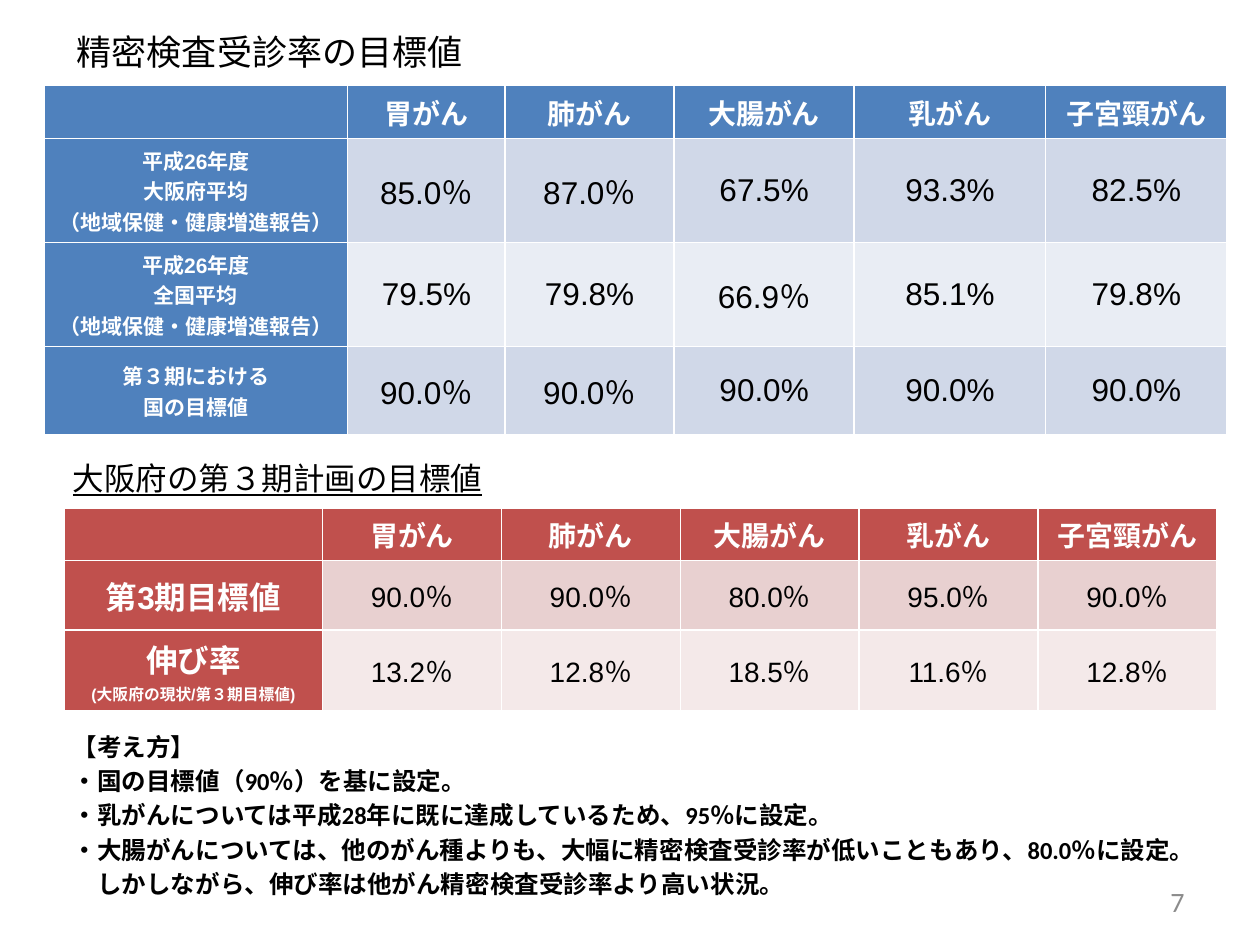
import pptx
import pptx.dml.color
import pptx.enum.text
import pptx.oxml
import pptx.oxml.ns
import pptx.util

RGB = pptx.dml.color.RGBColor
BLACK = RGB(0, 0, 0)
WHITE = RGB(255, 255, 255)
GRAY = RGB(0x8C, 0x8C, 0x8C)
BLUE = RGB(0x4F, 0x81, 0xBD)
BLUE_BANDS = [RGB(0xD0, 0xD8, 0xE8), RGB(0xE9, 0xED, 0xF4)]
RED = RGB(0xC0, 0x50, 0x4D)
RED_BANDS = [RGB(0xE8, 0xD0, 0xD0), RGB(0xF4, 0xE9, 0xE9)]
CJK = "Noto Sans CJK JP"
ALIGN = pptx.enum.text.PP_ALIGN
ANCHOR = pptx.enum.text.MSO_ANCHOR

prs = pptx.Presentation()
prs.slide_width = pptx.util.Inches(10)
prs.slide_height = pptx.util.Inches(7.5)
s = prs.slides.add_slide(prs.slide_layouts[5])


def box(left, top, width, height):
    x, y = prs.slide_width / 100, prs.slide_height / 100
    return [round(v) for v in (left * x, top * y, width * x, height * y)]


def style(p, size, font, color, bold=False, align=ALIGN.LEFT):
    p.alignment = align
    for r in p.runs:
        r.font.size = pptx.util.Pt(size)
        r.font.name = font
        r.font.bold = bold
        r.font.color.rgb = color
        ea = pptx.oxml.parse_xml(
            f'<a:ea {pptx.oxml.ns.nsdecls("a")} typeface="{CJK}"/>')
        r.font._element.find(pptx.oxml.ns.qn("a:latin")).addnext(ea)


title = s.shapes.title
title.left, title.top, title.width, title.height = box(5.1, 0.67, 90, 9.47)
title.text_frame.text = "精密検査受診率の目標値"
title.text_frame.vertical_anchor = ANCHOR.MIDDLE
style(title.text_frame.paragraphs[0], 20, "Calibri", BLACK)

header = ["", "胃がん", "肺がん", "大腸がん", "乳がん", "子宮頸がん"]
current = [
    header,
    ["平成26年度\n大阪府平均\n（地域保健・健康増進報告）",
     "85.0％", "87.0％", "67.5%", "93.3%", "82.5%"],
    ["平成26年度\n全国平均\n（地域保健・健康増進報告）",
     "79.5%", "79.8%", "66.9％", "85.1%", "79.8%"],
    ["第３期における\n国の目標値",
     "90.0％", "90.0％", "90.0%", "90.0%", "90.0%"],
]
target = [
    header,
    ["第3期目標値", "90.0％", "90.0％", "80.0％", "95.0％", "90.0％"],
    ["伸び率\n(大阪府の現状/第３期目標値)",
     "13.2％", "12.8％", "18.5％", "11.6％", "12.8％"],
]
tables = [
    (current, 3.5, 9.07, [24.1, 12.5, 13.4, 14.3, 15.2, 14.4],
     [5.47, 9.33, 9.33, 9.33], BLUE, BLUE_BANDS, [12, 12, 12], 18),
    (target, 5.1, 53.73, [20.5] + [14.2] * 5,
     [5.47, 7.33, 5.47], RED, RED_BANDS, [18, 9], 16),
]
for data, left, top, cols, rows, dark, bands, label_sizes, value_size in tables:
    frame = s.shapes.add_table(
        len(rows), len(cols), *box(left, top, sum(cols), sum(rows)))
    table = frame.table
    table.first_col = True
    for column, share in zip(table.columns, cols):
        column.width = round(prs.slide_width * share / 100)
    for row, share in zip(table.rows, rows):
        row.height = round(prs.slide_height * share / 100)
    for i, values in enumerate(data):
        for j, value in enumerate(values):
            cell = table.cell(i, j)
            heading = i == 0 or j == 0
            cell.fill.solid()
            cell.fill.fore_color.rgb = dark if heading else bands[(i - 1) % 2]
            cell.vertical_anchor = ANCHOR.MIDDLE
            cell.text_frame.text = value
            for n, p in enumerate(cell.text_frame.paragraphs):
                size = 16 if i == 0 else label_sizes[n] if j == 0 else value_size
                style(p, size, "Arial", WHITE if heading else BLACK,
                      heading, ALIGN.CENTER)

sp = s.shapes.add_textbox(*box(4.8, 47.87, 42.5, 5.33))
tf = sp.text_frame
tf.word_wrap = True
tf.text = "大阪府の第３期計画の目標値"
style(tf.paragraphs[0], 18, CJK, BLACK)
tf.paragraphs[0].runs[0].font.underline = True

sp = s.shapes.add_textbox(*box(71.7, 92.67, 23.3, 5.33))
tf = sp.text_frame
tf.word_wrap = True
tf.vertical_anchor = ANCHOR.MIDDLE
tf.text = "7"
style(tf.paragraphs[0], 16, "Calibri", GRAY, align=ALIGN.RIGHT)

sp = s.shapes.add_textbox(*box(4.8, 76.27, 90, 20))
tf = sp.text_frame
tf.word_wrap = True
tf.text = "\n".join([
    "【考え方】",
    "・国の目標値（90％）を基に設定。",
    "・乳がんについては平成28年に既に達成しているため、95％に設定。",
    "・大腸がんについては、他のがん種よりも、大幅に精密検査受診率が低いこともあり、80.0％に設定。",
    "　しかしながら、伸び率は他がん精密検査受診率より高い状況。",
])
for p in tf.paragraphs:
    p.line_spacing = pptx.util.Pt(19.6)
    style(p, 14, "Calibri", BLACK, True)

prs.save("out.pptx")
